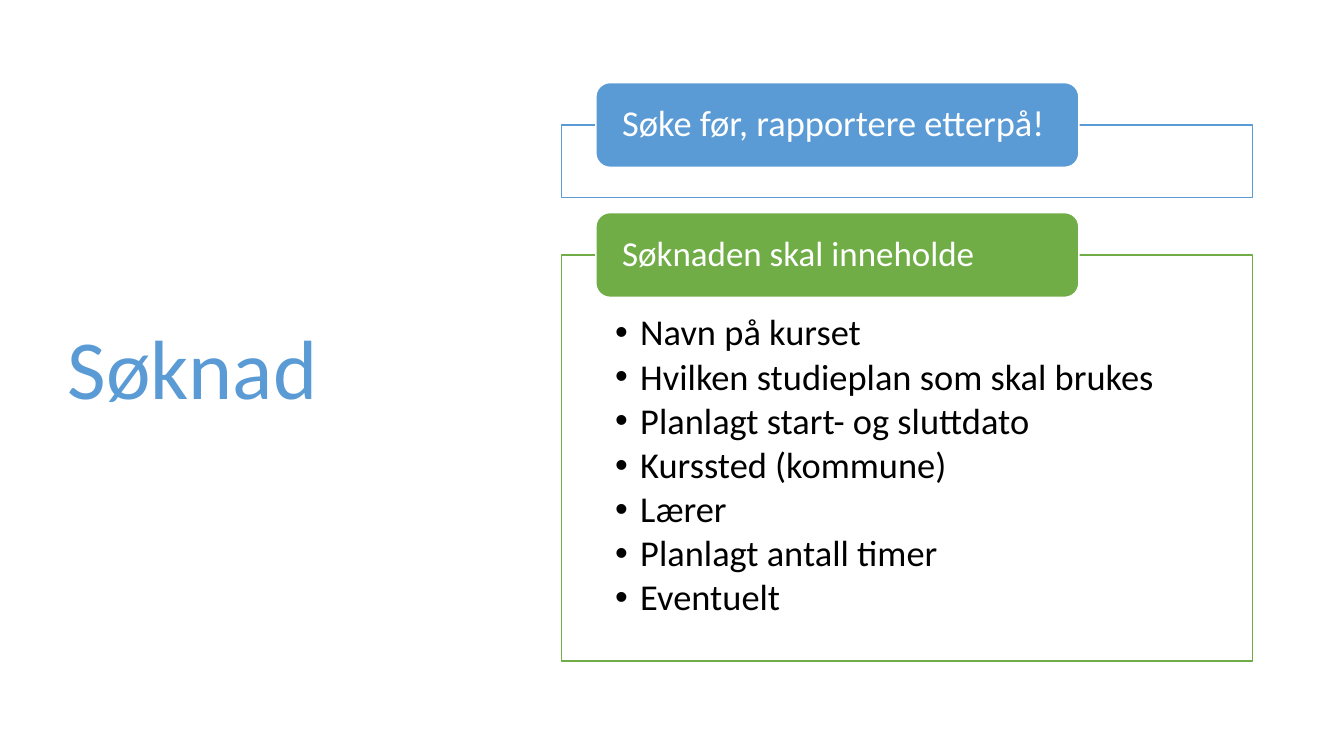
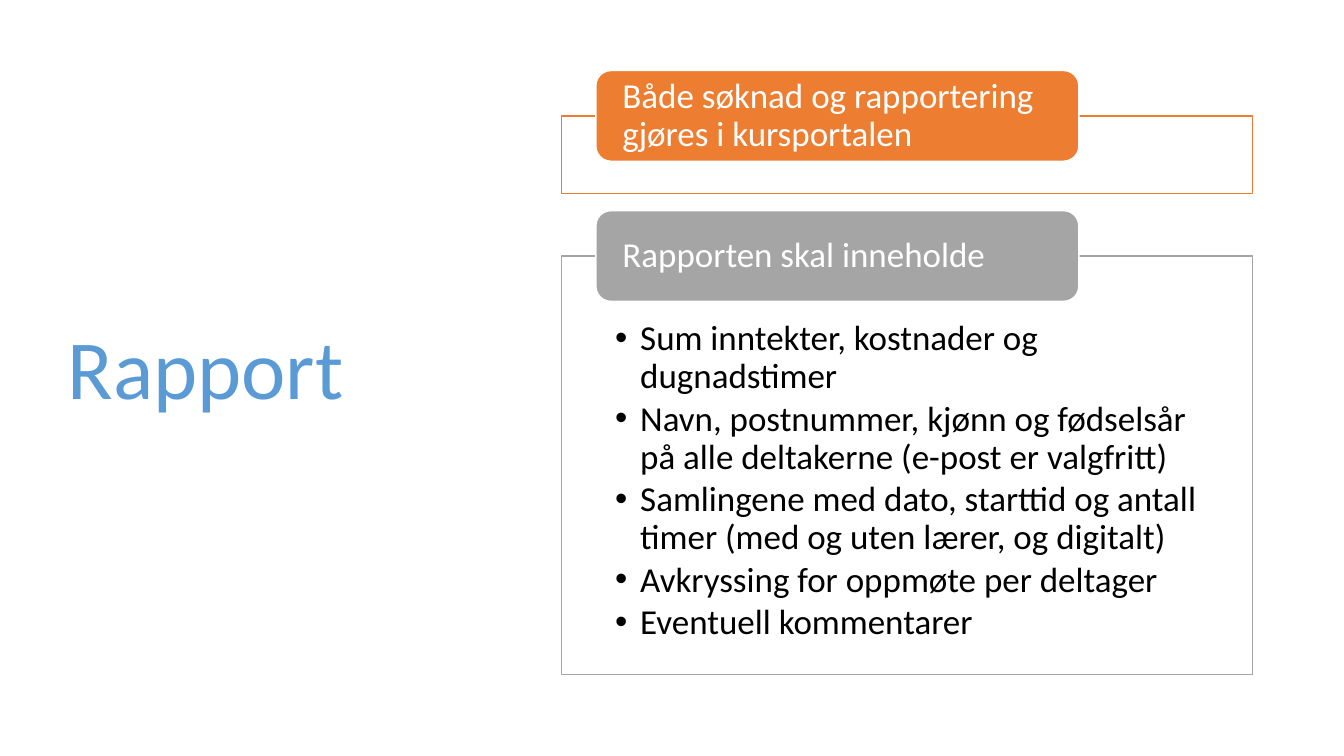
from dataclasses import dataclass

from pptx import Presentation
from pptx.dml.color import RGBColor
from pptx.enum.shapes import MSO_SHAPE as Preset
from pptx.enum.text import MSO_ANCHOR as Anchor, MSO_AUTO_SIZE as AutoSize, PP_ALIGN as Align
from pptx.util import Inches, Pt

FONT = "Calibri"
BLUE, GREEN, ORANGE, GREY = "5B9BD5", "70AD47", "ED7D31", "A5A5A5"
WHITE, BLACK = "FFFFFF", "000000"

FRAME_LEFT, FRAME_WIDTH = 5.57, 6.85
TAB_LEFT, TAB_WIDTH = 5.91, 4.79
BULLET_INDENT = Inches(0.25)


@dataclass(frozen=True)
class Section:
    heading: str
    colour: str
    top: float
    frame_height: float
    heading_size: int = 25
    items: tuple[str, ...] = ()


@dataclass(frozen=True)
class Page:
    title: str
    tab_height: float
    item_size: int
    item_inset: float
    sections: tuple[Section, ...]


PAGES = (
    Page("Søknad", 0.84, 26, 0.59, (
        Section("Søke før, rapportere etterpå!", BLUE, 0.82, 0.72, 26),
        Section("Søknaden skal inneholde", GREEN, 2.11, 4.03, items=(
            "Navn på kurset",
            "Hvilken studieplan som skal brukes",
            "Planlagt start- og sluttdato",
            "Kurssted (kommune)",
            "Lærer",
            "Planlagt antall timer",
            "Eventuelt",
        )),
    )),
    Page("Rapport", 0.9, 25, 0.64, (
        Section("Både søknad og rapportering gjøres i kursportalen", ORANGE, 0.7, 0.77),
        Section("Rapporten skal inneholde", GREY, 2.09, 4.15, items=(
            "Sum inntekter, kostnader og dugnadstimer",
            "Navn, postnummer, kjønn og fødselsår på alle deltakerne (e-post er valgfritt)",
            "Samlingene med dato, starttid og antall timer (med og uten lærer, og digitalt)",
            "Avkryssing for oppmøte per deltager",
            "Eventuell kommentarer",
        )),
    )),
)


def rgb(colour: str) -> RGBColor:
    return RGBColor.from_string(colour)


def place(shape, left: float, top: float, width: float, height: float) -> None:
    shape.left, shape.top = Inches(left), Inches(top)
    shape.width, shape.height = Inches(width), Inches(height)


def paint(shape, fill: str, line: str) -> None:
    shape.fill.solid()
    shape.fill.fore_color.rgb = rgb(fill)
    shape.line.color.rgb = rgb(line)
    shape.line.width = Pt(1)


def write(shape, lines: tuple[str, ...], size: int, colour: str, anchor: Anchor) -> None:
    frame = shape.text_frame
    frame.text = "\n".join(lines)
    frame.word_wrap = True
    frame.auto_size = AutoSize.NONE
    frame.vertical_anchor = anchor
    for paragraph in frame.paragraphs:
        paragraph.alignment = Align.LEFT
        paragraph.line_spacing = 0.9
        paragraph.space_before = Pt(0)
        paragraph.font.name = FONT
        paragraph.font.size = Pt(size)
        paragraph.font.color.rgb = rgb(colour)


def set_insets(shape, side: float, top: float, bottom: float) -> None:
    frame = shape.text_frame
    frame.margin_left = frame.margin_right = Inches(side)
    frame.margin_top, frame.margin_bottom = Inches(top), Inches(bottom)


def add_preset(slide, preset: Preset):
    shape = slide.shapes.add_shape(preset, 0, 0, 0, 0)
    shape.shadow.inherit = False
    return shape


def write_items(body, page: Page, items: tuple[str, ...]) -> None:
    write(body, items, page.item_size, BLACK, Anchor.TOP)
    set_insets(body, 0.53, page.item_inset, 0.2)
    for paragraph in body.text_frame.paragraphs:
        paragraph.space_after = Pt(3.5)
        properties = paragraph._p.get_or_add_pPr()
        properties.set("marL", str(BULLET_INDENT))
        properties.set("indent", str(-BULLET_INDENT))


def add_section(slide, page: Page, section: Section) -> None:
    frame = slide.placeholders[1] if section.items else add_preset(slide, Preset.RECTANGLE)
    place(frame, FRAME_LEFT, section.top + page.tab_height / 2, FRAME_WIDTH, section.frame_height)
    paint(frame, WHITE, section.colour)
    if section.items:
        write_items(frame, page, section.items)

    tab = add_preset(slide, Preset.ROUNDED_RECTANGLE)
    place(tab, TAB_LEFT, section.top, TAB_WIDTH, page.tab_height)
    paint(tab, section.colour, WHITE)
    write(tab, (section.heading,), section.heading_size, WHITE, Anchor.MIDDLE)
    set_insets(tab, 0.22, 0.04, 0.04)


def add_page(deck, page: Page) -> None:
    slide = deck.slides.add_slide(deck.slide_layouts[1])
    title = slide.shapes.title
    place(title, 0.57, 0.68, 4.16, 6.02)
    write(title, (page.title,), 60, BLUE, Anchor.MIDDLE)
    for section in page.sections:
        add_section(slide, page, section)


def main() -> None:
    deck = Presentation()
    deck.slide_width, deck.slide_height = Inches(13.33), Inches(7.5)
    for page in PAGES:
        add_page(deck, page)
    deck.save("out.pptx")


if __name__ == "__main__":
    main()
